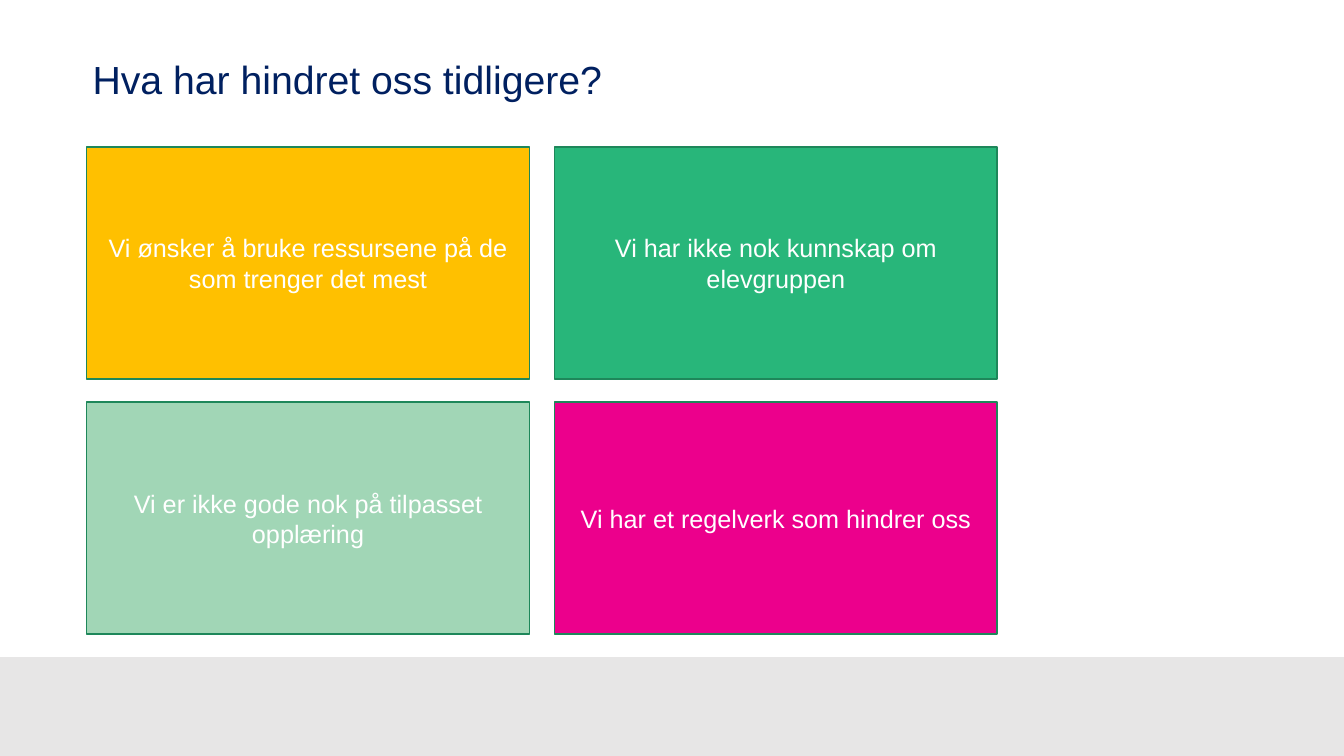
from pptx import Presentation
from pptx.dml.color import RGBColor
from pptx.enum.shapes import MSO_SHAPE
from pptx.enum.text import MSO_ANCHOR, PP_ALIGN
from pptx.util import Inches, Pt

RECT = MSO_SHAPE.RECTANGLE
MIDDLE = MSO_ANCHOR.MIDDLE
CENTER = PP_ALIGN.CENTER

COLORS = {
    "navy": "002060",
    "white": "FFFFFF",
    "gray": "E7E6E6",
    "border": "1E875A",
    "yellow": "FFC000",
    "green": "28B67A",
    "mint": "A1D6B6",
    "pink": "EC008C",
}
SLIDE_W, SLIDE_H = 13.33, 7.5
FOOTER_H = 0.98
GRID_LEFT, GRID_TOP = 0.86, 1.46
CARD_W, CARD_H = 4.39, 2.3
STEP_X, STEP_Y = 4.64, 2.53
CARDS = [
    ("Vi ønsker å bruke ressursene på de som trenger det mest", "yellow"),
    ("Vi har ikke nok kunnskap om elevgruppen", "green"),
    ("Vi er ikke gode nok på tilpasset opplæring", "mint"),
    ("Vi har et regelverk som hindrer oss", "pink"),
]


class Deck:
    font = "Arial"

    def __init__(self, slide):
        self.slide = slide

    def color(self, name):
        return RGBColor.from_string(COLORS[name])

    def add_text(self, p, text, size, color):
        r = p.add_run()
        r.text = text
        r.font.name = self.font
        r.font.size = Pt(size)
        r.font.color.rgb = self.color(color)

    def rect(self, x, y, w, h, fill):
        s = self.slide.shapes.add_shape(
            RECT, Inches(x), Inches(y), Inches(w), Inches(h))
        s.shadow.inherit = False
        s.fill.solid()
        s.fill.fore_color.rgb = self.color(fill)
        s.line.fill.background()
        return s

    def card(self, x, y, text, fill):
        s = self.rect(x, y, CARD_W, CARD_H, fill)
        s.line.color.rgb = self.color("border")
        s.line.width = Pt(1)
        tf = s.text_frame
        tf.word_wrap = True
        tf.vertical_anchor = MIDDLE
        p = tf.paragraphs[0]
        p.alignment = CENTER
        self.add_text(p, text, 18, "white")

    def title(self, x, y, w, h, text):
        s = self.slide.shapes.add_textbox(
            Inches(x), Inches(y), Inches(w), Inches(h))
        tf = s.text_frame
        tf.word_wrap = True
        p = tf.paragraphs[0]
        p.line_spacing = 0.9
        self.add_text(p, text, 28, "navy")


def main():
    prs = Presentation()
    prs.slide_width = Inches(SLIDE_W)
    prs.slide_height = Inches(SLIDE_H)
    deck = Deck(prs.slides.add_slide(prs.slide_layouts[6]))
    deck.rect(0, SLIDE_H - FOOTER_H, SLIDE_W, FOOTER_H, "gray")
    for i, (text, fill) in enumerate(CARDS):
        row, col = divmod(i, 2)
        deck.card(GRID_LEFT + col * STEP_X, GRID_TOP + row * STEP_Y, text, fill)
    deck.title(0.82, 0.55, 12.4, 0.41, "Hva har hindret oss tidligere?")
    prs.save("out.pptx")


if __name__ == "__main__":
    main()
